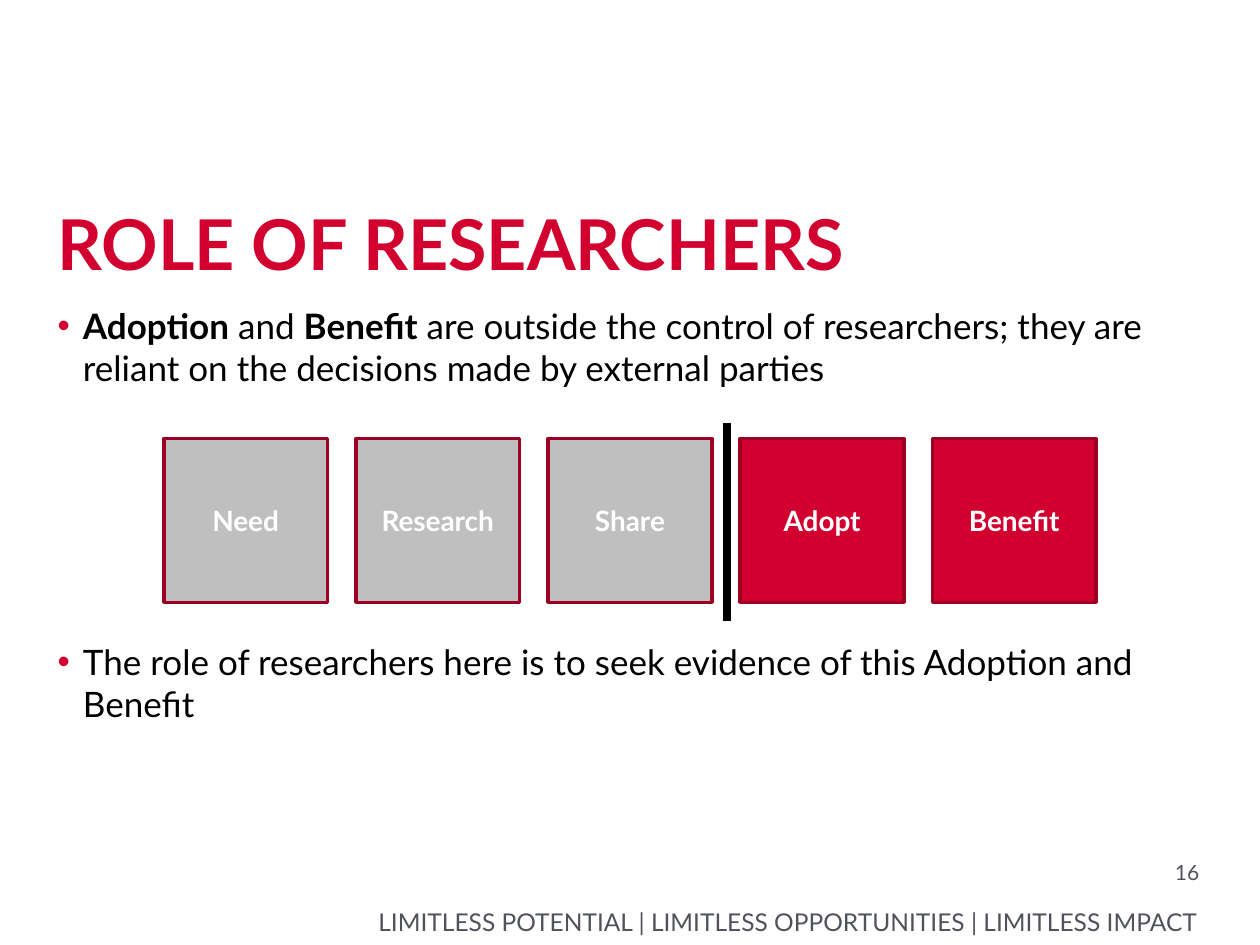
from lxml.etree import SubElement
from pptx import Presentation
from pptx.dml.color import RGBColor
from pptx.enum.shapes import MSO_CONNECTOR as Connector, MSO_SHAPE as Shape
from pptx.enum.text import MSO_ANCHOR as Anchor, MSO_AUTO_SIZE as AutoSize, PP_ALIGN as Align
from pptx.oxml.ns import qn
from pptx.util import Pt

RED = RGBColor(0xD2, 0x00, 0x2E)
DARK_RED = RGBColor(0x9B, 0x00, 0x22)
SILVER = RGBColor(0xBF, 0xBF, 0xBF)
SLATE = RGBColor(0x50, 0x53, 0x5A)
BLACK = RGBColor(0, 0, 0)
WHITE = RGBColor(0xFF, 0xFF, 0xFF)


class SlideBuilder:
    """Adds elements in one house style to the current slide."""

    font_name = "Lato"

    def __init__(self, slide):
        self.slide = slide

    def style(self, paragraph, size, color, bold=None, align=Align.LEFT):
        paragraph.alignment = align
        font = paragraph.font
        font.name, font.size, font.bold = self.font_name, Pt(size), bold
        font.color.rgb = color

    def frame(self, holder, box, anchor):
        holder.left, holder.top, holder.width, holder.height = map(Pt, box)
        frame = holder.text_frame
        frame.margin_left = frame.margin_right = 0
        frame.margin_top = frame.margin_bottom = 0
        frame.word_wrap = True
        frame.auto_size = AutoSize.NONE
        frame.vertical_anchor = anchor
        return frame

    def title(self, text, box):
        heading = self.frame(self.slide.shapes.title, box, Anchor.BOTTOM)
        heading.text = text
        self.style(heading.paragraphs[0], 40, RED, bold=True)

    def bullets(self, points, box, gap):
        body = self.frame(self.slide.placeholders[1], box, Anchor.TOP)
        for index, point in enumerate(points):
            paragraph = body.add_paragraph() if index else body.paragraphs[0]
            paragraph.space_before = Pt(gap if index else 0)
            for text, bold in point:
                run = paragraph.add_run()
                run.text = text
                if bold:
                    run.font.bold = True
            properties = paragraph._p.get_or_add_pPr()
            properties.set("marL", str(Pt(14.4)))
            properties.set("indent", str(-Pt(14.4)))
            bullet_color = SubElement(properties, qn("a:buClr"))
            SubElement(bullet_color, qn("a:srgbClr"), val=str(RED))
            SubElement(properties, qn("a:buChar"), char="•")
            self.style(paragraph, 20, BLACK)

    def label(self, text, box, size, anchor):
        label = self.frame(self.slide.shapes.add_textbox(*map(Pt, box)), box, anchor)
        label.text = text
        self.style(label.paragraphs[0], size, SLATE, align=Align.RIGHT)

    def stage(self, text, box, fill):
        stage = self.slide.shapes.add_shape(Shape.RECTANGLE, *map(Pt, box))
        stage.shadow.inherit = False
        stage.fill.solid()
        stage.fill.fore_color.rgb = fill
        stage.line.color.rgb = DARK_RED
        stage.line.width = Pt(2)
        stage.text_frame.text = text
        stage.text_frame.vertical_anchor = Anchor.MIDDLE
        self.style(stage.text_frame.paragraphs[0], 16, WHITE, bold=True, align=Align.CENTER)

    def divider(self, x, top, bottom):
        divider = self.slide.shapes.add_connector(
            Connector.STRAIGHT, Pt(x), Pt(top), Pt(x), Pt(bottom))
        divider.line.color.rgb = BLACK
        divider.line.width = Pt(5)
        SubElement(divider._element.spPr, qn("a:effectLst"))


def main():
    deck = Presentation()
    deck.slide_width, deck.slide_height = Pt(720), Pt(540)
    builder = SlideBuilder(deck.slides.add_slide(deck.slide_layouts[1]))

    builder.label("LIMITLESS POTENTIAL\u2002|\u2002LIMITLESS OPPORTUNITIES\u2002|\u2002LIMITLESS IMPACT"
                  .replace("\u2002", " "), (152, 517.7, 532.8, 17.3), 14, Anchor.BOTTOM)
    builder.title("ROLE OF RESEARCHERS", (33, 97.2, 652.4, 65.6))
    builder.bullets([
        [("Adoption", True), (" and ", False), ("Benefit", True),
         (" are outside the control of researchers; they are reliant on "
          "the decisions made by external parties", False)],
        [("The role of researchers here is to seek evidence of this Adoption and Benefit", False)],
    ], (33, 174.2, 652.4, 311.8), gap=144)
    builder.label("16", (632, 491, 53.3, 20), 12, Anchor.TOP)

    side, pitch = 93.6, 109.8
    stages = ["Need", "Research", "Share", "Adopt", "Benefit"]
    external = {"Adopt", "Benefit"}
    for index, name in enumerate(stages):
        fill = RED if name in external else SILVER
        builder.stage(name, (93.6 + index * pitch, 250.6, side, side), fill)
    builder.divider(415.4, 241.9, 355)

    deck.save("out.pptx")


if __name__ == "__main__":
    main()
